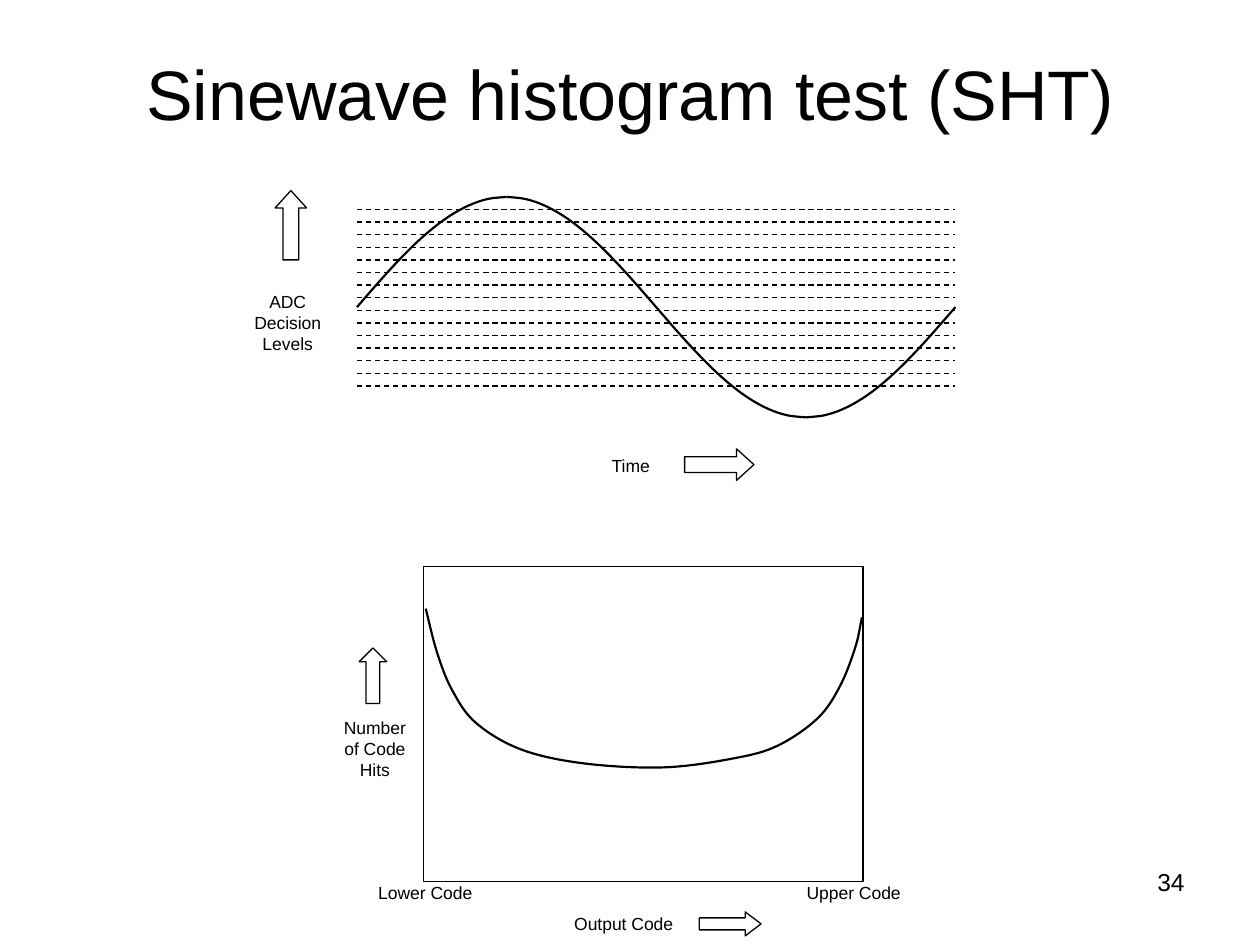
"""Build a slide on the sinewave histogram test."""
from dataclasses import dataclass
from math import pi, sin

from lxml.etree import SubElement
from pptx import Presentation
from pptx.dml.color import RGBColor
from pptx.enum.dml import MSO_LINE
from pptx.enum.shapes import MSO_CONNECTOR, MSO_SHAPE
from pptx.enum.text import MSO_ANCHOR, PP_ALIGN
from pptx.oxml.ns import qn
from pptx.util import Pt


@dataclass
class Theme:
    font: str = "Arial"
    ink: RGBColor = RGBColor(0, 0, 0)
    paper: RGBColor = RGBColor(255, 255, 255)
    title: float = 40
    number: float = 14
    label: float = 10
    thin: float = 0.75
    thick: float = 1.25


theme = Theme()


def add_block(shapes, kind, box, lines=(), filled=True, size=theme.label, align=PP_ALIGN.CENTER):
    box = [Pt(v) for v in box]
    if kind is None:
        sp = shapes.add_textbox(*box)
    else:
        sp = shapes.add_shape(kind, *box)
        sp.shadow.inherit = False
        if filled:
            sp.fill.solid()
            sp.fill.fore_color.rgb = theme.paper
        else:
            sp.fill.background()
        if lines:
            sp.line.fill.background()
        else:
            sp.line.color.rgb = theme.ink
            sp.line.width = Pt(theme.thin)
    tf = sp.text_frame
    tf.word_wrap = True
    tf.vertical_anchor = MSO_ANCHOR.TOP
    for i, line in enumerate(lines):
        p = tf.add_paragraph() if i else tf.paragraphs[0]
        p.text = line
        p.alignment = align
        p.font.name = theme.font
        p.font.size = Pt(size)
        p.font.color.rgb = theme.ink
    return sp


def add_curve(shapes, points):
    points = [(Pt(x), Pt(y)) for x, y in points]
    builder = shapes.build_freeform(*points[0])
    builder.add_line_segments(points[1:], close=False)
    sp = builder.convert_to_shape()
    sp.shadow.inherit = False
    sp.fill.background()
    sp.line.color.rgb = theme.ink
    sp.line.width = Pt(theme.thick)
    outline = next(sp._element.iter(qn("a:path")))
    knots = [(int(pt.get("x")), int(pt.get("y"))) for pt in outline.iter(qn("a:pt"))]
    for segment in outline.findall(qn("a:lnTo")):
        outline.remove(segment)
    padded = [knots[0], *knots, knots[-1]]
    for a, b, c, d in zip(padded, padded[1:], padded[2:], padded[3:]):
        bend = SubElement(outline, qn("a:cubicBezTo"))
        leave = [v + (after - before) / 6 for before, v, after in zip(a, b, c)]
        arrive = [v - (after - before) / 6 for before, v, after in zip(b, c, d)]
        for x, y in (leave, arrive, c):
            SubElement(bend, qn("a:pt"), x=str(round(x)), y=str(round(y)))


prs = Presentation()
prs.slide_width, prs.slide_height = Pt(720), Pt(540)
s = prs.slides.add_slide(prs.slide_layouts[5])

title = s.shapes.title
title.left, title.top, title.width, title.height = Pt(36), Pt(21.6), Pt(648), Pt(62.6)
tf = title.text_frame
tf.text = "Sinewave histogram test (SHT)"
tf.vertical_anchor = MSO_ANCHOR.MIDDLE
p = tf.paragraphs[0]
p.alignment = PP_ALIGN.CENTER
p.font.name = theme.font
p.font.size = Pt(theme.title)
p.font.color.rgb = theme.ink

add_block(s.shapes, None, (516.2, 491.8, 167.8, 37.4), ["34"],
          size=theme.number, align=PP_ALIGN.RIGHT)

wave = s.shapes.add_group_shape().shapes
left, middle, quarter, amplitude, steps = 204, 175.5, 85.5, 63, 8
for q in range(4):
    add_curve(wave, [(left + quarter * (q + i / steps),
                      middle - amplitude * sin(pi / 2 * (q + i / steps)))
                     for i in range(steps + 1)])

for level in range(15):
    y = Pt(119.75 + 7.2 * level)
    cn = wave.add_connector(MSO_CONNECTOR.STRAIGHT, Pt(left), y, Pt(left + 4 * quarter), y)
    cn.line.color.rgb = theme.ink
    cn.line.width = Pt(theme.thin)
    cn.line.dash_style = MSO_LINE.DASH
    SubElement(cn._element.spPr, qn("a:effectLst"))

add_block(wave, MSO_SHAPE.RECTANGLE, (337, 256.5, 46.8, 25.2), ["Time"])
time_arrow = add_block(wave, MSO_SHAPE.RIGHT_ARROW, (391.2, 256.5, 39.6, 18))
add_block(wave, MSO_SHAPE.RECTANGLE, (132, 162.9, 64.8, 57.6), ["ADC", "Decision Levels"])
level_arrow = add_block(wave, MSO_SHAPE.UP_ARROW, (157.2, 108.9, 18, 39.6))

histogram = s.shapes.add_group_shape().shapes
add_block(histogram, MSO_SHAPE.RECTANGLE, (241.9, 323.7, 251.3, 180), filled=False)
add_curve(histogram, [(243.3, 347.8), (249.8, 373), (258.5, 394.6), (272.2, 413.3),
                      (298.1, 428.4), (334.1, 436.3), (379.4, 438.5), (419, 433.4),
                      (444.2, 426.2), (467.3, 410.4), (480.2, 391.7), (488.9, 369.4),
                      (492.5, 352.8)])
add_block(histogram, None, (183.6, 406.1, 61.2, 56.9), ["Number", "of Code Hits"])
code_arrow = add_block(histogram, MSO_SHAPE.RIGHT_ARROW, (399.6, 521.1, 35.3, 13.7))
hits_arrow = add_block(histogram, MSO_SHAPE.UP_ARROW, (205.2, 370.3, 15.8, 31.7))
for text, x, y, w in [("Output Code", 298.8, 518.4, 115.2),
                      ("Lower Code", 194.4, 500.2, 97.2),
                      ("Upper Code", 439.2, 500.2, 97.2)]:
    add_block(histogram, None, (x, y, w, 21.6), [text])

for arrow, head in [(time_arrow, 0.55), (level_arrow, 0.55),
                    (code_arrow, 0.66), (hits_arrow, 0.5)]:
    arrow.adjustments[0] = 0.5
    arrow.adjustments[1] = head

prs.save("out.pptx")
